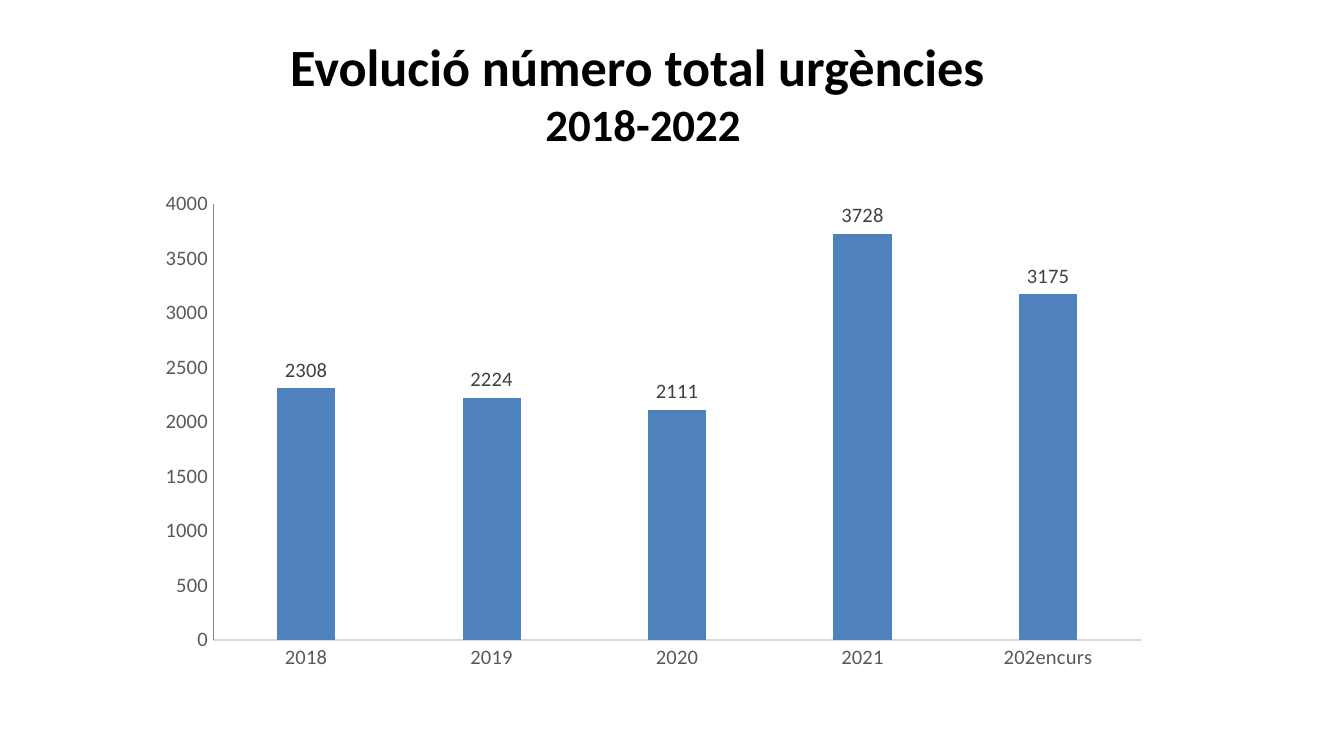
from copy import deepcopy

from pptx import Presentation
from pptx.chart.data import CategoryChartData
from pptx.dml.color import RGBColor
from pptx.enum.chart import XL_CHART_TYPE, XL_LABEL_POSITION, XL_TICK_MARK
from pptx.enum.text import MSO_ANCHOR, MSO_AUTO_SIZE, PP_ALIGN
from pptx.util import Inches, Pt

WIDTH = Inches(10)
HEIGHT = WIDTH * 9 // 16
FONT = "Calibri"
TITLE_BOX = (0.026, 0.014, 0.905, 0.194)
CHART_BOX = (0.108, 0.24, 0.756, 0.66)
URGENCIES = {"2018": 2308, "2019": 2224, "2020": 2111, "2021": 3728, "202encurs": 3175}


def place(box):
    """Turn shares of the slide into left, top, width and height."""
    return [round(share * side) for share, side in zip(box, (WIDTH, HEIGHT) * 2)]


def colour(hex_code):
    """Turn a hex string into a colour."""
    return RGBColor.from_string(hex_code)


def style(font, size, hex_code, bold=False):
    """Set typeface, size, colour and weight of a font."""
    font.name, font.size, font.bold = FONT, Pt(size), bold
    font.color.rgb = colour(hex_code)


def style_axis(axis, line_hex):
    """Remove ticks and gridlines and format the labels and line of an axis."""
    axis.has_major_gridlines = False
    axis.major_tick_mark = axis.minor_tick_mark = XL_TICK_MARK.NONE
    style(axis.tick_labels.font, 11, "595959")
    axis.format.line.color.rgb = colour(line_hex)
    axis.format.line.width = Pt(0.75)


def add_heading(page, box):
    """Fill the title placeholder with the heading and its smaller period line."""
    title = page.shapes.title
    title.left, title.top, title.width, title.height = place(box)
    frame = title.text_frame
    frame.vertical_anchor = MSO_ANCHOR.BOTTOM
    frame.auto_size = MSO_AUTO_SIZE.NONE
    para = frame.paragraphs[0]
    para.text = "Evolució número total urgències \v2018-2022"
    para.alignment = PP_ALIGN.CENTER
    heading, period = para.runs
    style(heading.font, 28, "000000", bold=True)
    style(period.font, 24, "000000", bold=True)
    heading._r.getnext().append(deepcopy(heading._r.rPr))


def add_urgency_chart(page, box):
    """Draw the yearly totals as labelled columns."""
    data = CategoryChartData()
    data.categories = list(URGENCIES)
    data.add_series("Series 1", list(URGENCIES.values()))
    chart = page.shapes.add_chart(XL_CHART_TYPE.COLUMN_CLUSTERED, *place(box), data).chart
    chart.has_legend = chart.has_title = False
    style(chart.font, 11, "000000")
    style_axis(chart.category_axis, "D9D9D9")
    style_axis(chart.value_axis, "868686")
    chart.value_axis.minimum_scale, chart.value_axis.maximum_scale = 0, 4000
    chart.value_axis.major_unit = 500

    plot = chart.plots[0]
    plot.gap_width, plot.overlap, plot.vary_by_categories = 219, -27, False
    fill = plot.series[0].format.fill
    fill.solid()
    fill.fore_color.rgb = colour("4F81BD")
    labels = plot.series[0].data_labels
    labels.show_value = True
    labels.position = XL_LABEL_POSITION.OUTSIDE_END
    style(labels.font, 11, "404040")


def main():
    """Build the slide and save the deck."""
    deck = Presentation()
    deck.slide_width, deck.slide_height = WIDTH, HEIGHT
    page = deck.slides.add_slide(deck.slide_layouts[5])
    add_urgency_chart(page, CHART_BOX)
    add_heading(page, TITLE_BOX)
    deck.save("out.pptx")


if __name__ == "__main__":
    main()
